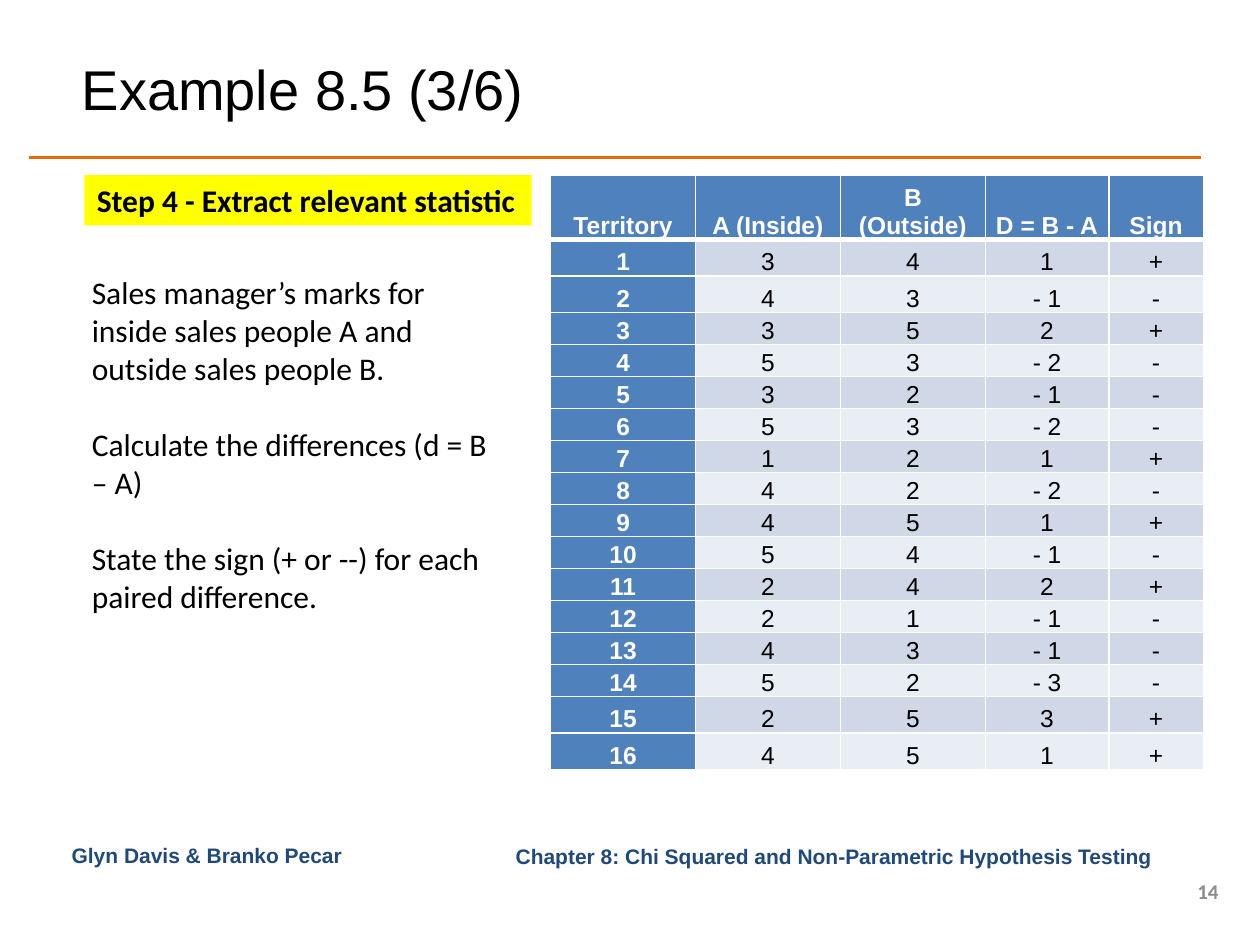
"""Build the Example 8.5 slide: sign test differences between inside and outside sales marks."""
import lxml.etree
import pptx
import pptx.dml.color
import pptx.enum.dml
import pptx.enum.shapes
import pptx.enum.text
import pptx.oxml.ns
import pptx.util

RGB = pptx.dml.color.RGBColor
BLACK, WHITE = RGB(0x00, 0x00, 0x00), RGB(0xFF, 0xFF, 0xFF)
NAVY, GREY = RGB(0x1F, 0x49, 0x7D), RGB(0x8C, 0x8C, 0x8C)
ORANGE, YELLOW = RGB(0xE4, 0x6C, 0x0A), RGB(0xFF, 0xFF, 0x00)
BLUE, DARK_BAND, LIGHT_BAND = RGB(0x4F, 0x81, 0xBD), RGB(0xD0, 0xD8, 0xE8), RGB(0xE9, 0xED, 0xF4)

ALIGN = pptx.enum.text.PP_ALIGN
ANCHOR = pptx.enum.text.MSO_ANCHOR
Pt = pptx.util.Pt

FOOTER = {"size": Pt(12), "name": "Arial", "bold": True}
BODY = {"size": Pt(18), "name": "Calibri", "bold": False}

TEXTS = [
    {"lines": ["Chapter 8: Chi Squared and Non-Parametric Hypothesis Testing "],
     "at": (32, 88.53, 60.9, 4.13), "font": FOOTER, "color": NAVY,
     "align": ALIGN.RIGHT, "anchor": ANCHOR.MIDDLE},
    {"lines": ["Example 8.5 (3/6)"], "at": (5.5, 4.13, 75.8, 10.4),
     "font": {"size": Pt(32), "name": "Arial", "bold": False}, "anchor": ANCHOR.MIDDLE},
    {"lines": ["14"], "at": (93, 92.67, 4.7, 3.2), "font": FOOTER | {"name": "Calibri"},
     "color": GREY, "align": ALIGN.RIGHT, "anchor": ANCHOR.MIDDLE},
    {"lines": ["Glyn Davis & Branko Pecar"], "at": (4.7, 88.53, 28.1, 4.13),
     "font": FOOTER, "color": NAVY},
    {"lines": ["Step 4 - Extract relevant statistic"], "at": (6.7, 18.53, 35.5, 5.33),
     "font": BODY | {"bold": True}, "align": ALIGN.JUSTIFY, "fill": YELLOW, "wrap": False},
    {"lines": ["Sales manager’s marks for inside sales people A and outside sales people B.",
               "Calculate the differences (d = B – A)",
               "State the sign (+ or --) for each paired difference."],
     "at": (6.3, 28.27, 34.2, 37.73), "font": BODY},
]

HEADINGS = ["Territory", "A (Inside)", "B (Outside)", "D = B - A", "Sign"]
MARKS = [(3, 4), (4, 3), (3, 5), (5, 3), (3, 2), (5, 3), (1, 2), (4, 2),
         (4, 5), (5, 4), (2, 4), (2, 1), (4, 3), (5, 2), (2, 5), (4, 5)]
COLUMN_SHARES = [11.5, 11.5, 11.5, 9.8, 7.5]
TABLE_LEFT, TABLE_TOP, TABLE_HEIGHT = 43.7, 18.53, 62.93
HEADER_SHARE, TALL_SHARE = 6.8, 3.87
TALL_TERRITORIES = {1, 2, 15, 16}
RULE = {"left": 2.3, "right": 95.3, "y": 16.67}

deck = pptx.Presentation()
deck.slide_width, deck.slide_height = pptx.util.Inches(10), pptx.util.Inches(7.5)
slide = deck.slides.add_slide(deck.slide_layouts[6])


def across(share):
    return round(deck.slide_width * share / 100)


def down(share):
    return round(deck.slide_height * share / 100)


def box(left, top, width, height):
    return across(left), down(top), across(width), down(height)


def apply(target, values):
    for name, value in values.items():
        setattr(target, name, value)


def write(paragraph, words, font, color):
    run = paragraph.add_run()
    run.text = words
    apply(run.font, font)
    run.font.color.rgb = color


def add_text(lines, at, font, color=BLACK, align=ALIGN.LEFT, anchor=ANCHOR.TOP,
             fill=None, wrap=True):
    holder = slide.shapes.add_textbox(*box(*at))
    if fill is not None:
        holder.fill.solid()
        holder.fill.fore_color.rgb = fill
    frame = holder.text_frame
    apply(frame, {"word_wrap": wrap, "vertical_anchor": anchor})
    for index, words in enumerate(lines):
        paragraph = frame.add_paragraph() if index else frame.paragraphs[0]
        paragraph.alignment = align
        if index:
            paragraph.space_before = Pt(22)
        write(paragraph, words, font, color)


def add_border(cell, side, points):
    qn = pptx.oxml.ns.qn
    edge = lxml.etree.SubElement(cell._tc.get_or_add_tcPr(), qn(f"a:ln{side}"), w=str(Pt(points)))
    paint = lxml.etree.SubElement(edge, qn("a:solidFill"))
    lxml.etree.SubElement(paint, qn("a:srgbClr"), val=str(WHITE))


def add_marks_table():
    rows = [HEADINGS]
    for territory, (inside, outside) in enumerate(MARKS, 1):
        gap = outside - inside
        difference, sign = (str(gap), "+") if gap > 0 else (f"- {-gap}", "-")
        rows.append([str(territory), str(inside), str(outside), difference, sign])

    at = box(TABLE_LEFT, TABLE_TOP, sum(COLUMN_SHARES), TABLE_HEIGHT)
    table = slide.shapes.add_table(len(rows), len(HEADINGS), *at).table
    for column, share in zip(table.columns, COLUMN_SHARES):
        column.width = across(share)

    tall_count = len(TALL_TERRITORIES)
    short_share = ((TABLE_HEIGHT - HEADER_SHARE - tall_count * TALL_SHARE)
                   / (len(MARKS) - tall_count))
    for r, values in enumerate(rows):
        body_share = TALL_SHARE if r in TALL_TERRITORIES else short_share
        table.rows[r].height = down(body_share if r else HEADER_SHARE)
        for c, words in enumerate(values):
            cell = table.cell(r, c)
            heading = r == 0 or c == 0
            apply(cell, {"margin_left": across(0.7), "margin_right": across(0.7),
                         "margin_top": 0, "margin_bottom": 0,
                         "vertical_anchor": ANCHOR.BOTTOM})
            borders = {"L": 1, "R": 1, "T": 3 if r == 1 else 1, "B": 1 if r else 3}
            for side, points in borders.items():
                add_border(cell, side, points)
            cell.fill.solid()
            cell.fill.fore_color.rgb = BLUE if heading else DARK_BAND if r % 2 else LIGHT_BAND
            paragraph = cell.text_frame.paragraphs[0]
            paragraph.alignment = ALIGN.CENTER
            write(paragraph, words, {"size": Pt(14), "name": "Arial", "bold": heading},
                  WHITE if heading else BLACK)


def add_title_rule():
    rule = slide.shapes.add_connector(
        pptx.enum.shapes.MSO_CONNECTOR.STRAIGHT, across(RULE["left"]), down(RULE["y"]),
        across(RULE["right"]), down(RULE["y"]))
    rule.line.color.rgb = ORANGE
    rule.line.width = Pt(2)
    lxml.etree.SubElement(rule._element.spPr, pptx.oxml.ns.qn("a:effectLst"))


add_title_rule()
for text in TEXTS:
    add_text(**text)
add_marks_table()
deck.save("out.pptx")
